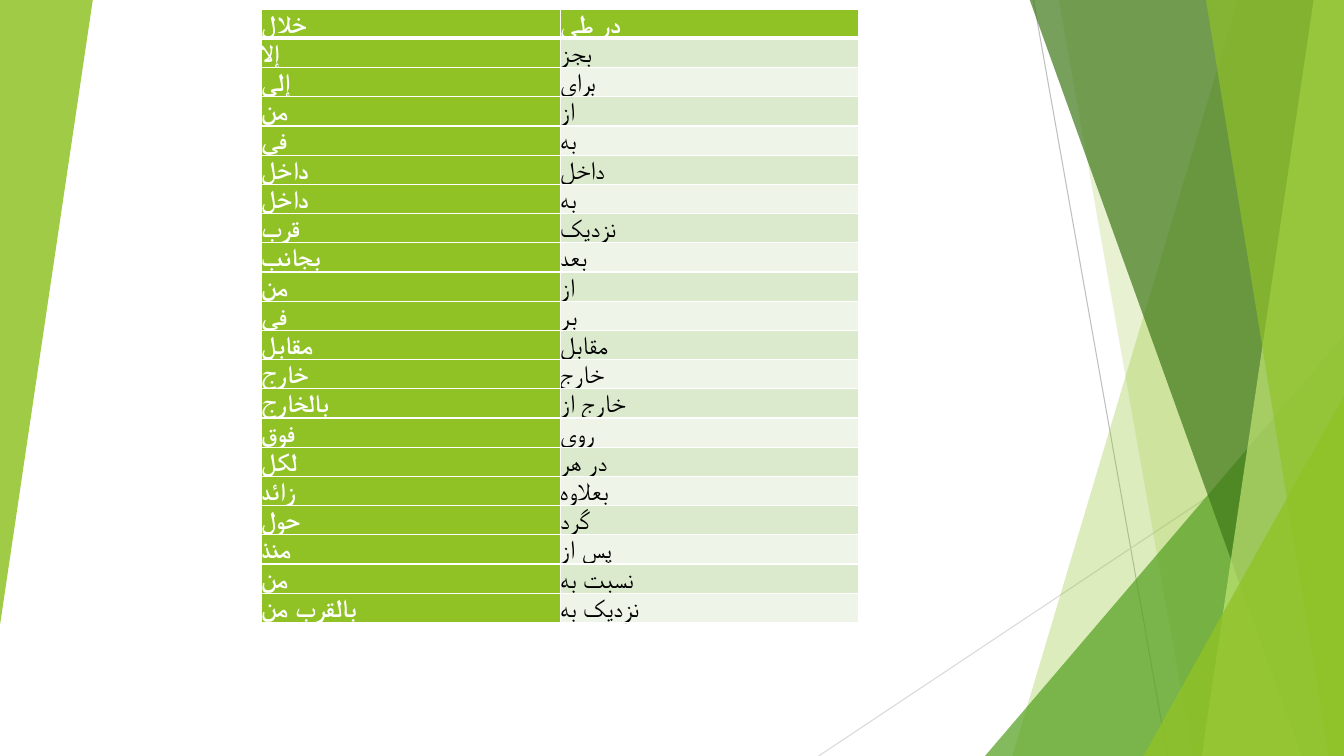
from dataclasses import dataclass

from lxml.etree import SubElement
from pptx import Presentation
from pptx.dml.color import RGBColor
from pptx.enum.shapes import MSO_CONNECTOR, MSO_SHAPE
from pptx.enum.text import MSO_ANCHOR
from pptx.oxml.ns import qn
from pptx.util import Inches, Pt


@dataclass(frozen=True)
class Theme:
    green: str = "90C226"
    leaf: str = "54A021"
    forest: str = "3F7819"
    lime: str = "C0E474"
    dark_band: str = "DBE9CD"
    light_band: str = "EEF4E8"
    white: str = "FFFFFF"
    black: str = "000000"
    steep_line: str = "BFBFBF"
    shallow_line: str = "D9D9D9"
    font: str = "Karla"
    text_size: float = 18
    line_spacing: float = 1.15


@dataclass(frozen=True)
class Box:
    left: float
    top: float
    width: float
    height: float

    @property
    def right(self):
        return self.left + self.width

    @property
    def bottom(self):
        return self.top + self.height


THEME = Theme()
SLIDE_WIDTH, SLIDE_HEIGHT = 13.33, 7.5

# Arabic word and its Persian meaning; the first pair is the header.
WORD_PAIRS = [
    ("خلال", "در طی"),
    ("إلا", "بجز"),
    ("إلى", "برای"),
    ("من", "از"),
    ("في", "به"),
    ("داخل", "داخل"),
    ("داخل", "به"),
    ("قرب", "نزدیک"),
    ("بجانب", "بعد"),
    ("من", "از"),
    ("في", "بر"),
    ("مقابل", "مقابل"),
    ("خارج", "خارج"),
    ("بالخارج", "خارج از"),
    ("فوق", "روی"),
    ("لكل", "در هر"),
    ("زائد", "بعلاوه"),
    ("حول", "گرد"),
    ("منذ", "پس از"),
    ("من", "نسبت به"),
    ("بالقرب من", "نزدیک به"),
]


def paint(shape, color, opacity):
    """Give a shape a translucent fill with no outline or shadow."""
    shape.shadow.inherit = False
    shape.line.fill.background()
    shape.fill.solid()
    shape.fill.fore_color.rgb = RGBColor.from_string(color)
    color_element = shape.fill._xPr.find(qn("a:solidFill"))[0]
    SubElement(color_element, qn("a:alpha"), val=str(opacity * 1000))


def add_thin_line(slide, start, end, color):
    line = slide.shapes.add_connector(
        MSO_CONNECTOR.STRAIGHT, *(Inches(value) for value in start + end))
    line.line.color.rgb = RGBColor.from_string(color)
    line.line.width = Pt(0.75)
    SubElement(line._element.spPr, qn("a:effectLst"))


def add_slab(slide, box, top_inset, bottom_inset, color, opacity):
    """Draw a facet with a slanted left side, inset from the box's right edge."""
    top = box.top - 0.01
    corners = [
        (box.right - top_inset, top),
        (box.right, top),
        (box.right, box.bottom),
        (box.right - bottom_inset, box.bottom),
    ]
    points = [(Inches(x), Inches(y)) for x, y in corners]
    builder = slide.shapes.build_freeform(*points[0], scale=1.0)
    builder.add_line_segments(points[1:], close=True)
    paint(builder.convert_to_shape(), color, opacity)


def add_right_triangle(slide, box, color, opacity, rotation=0):
    triangle = slide.shapes.add_shape(
        MSO_SHAPE.ISOSCELES_TRIANGLE, Inches(box.left), Inches(box.top),
        Inches(box.width), Inches(box.height))
    triangle.adjustments[0] = 1
    triangle.rotation = rotation
    paint(triangle, color, opacity)


def add_corner_triangle(slide, box, width, height, color, opacity):
    """Draw a triangle in the bottom right corner of the box."""
    corner = Box(box.right - width, box.bottom - height, width, height)
    add_right_triangle(slide, corner, color, opacity)


def add_facets(slide, box):
    add_thin_line(slide, (box.left + 2.13, box.top),
                  (box.left + 3.46, box.bottom), THEME.steep_line)
    add_thin_line(slide, (box.right, box.top + 4.03),
                  (box.left, box.bottom), THEME.shallow_line)
    add_slab(slide, box, 1.05, 3.29, THEME.green, 30)
    add_slab(slide, box, 2.83, 1.5, THEME.green, 20)
    add_corner_triangle(slide, box, 3.56, 4.17, THEME.leaf, 72)
    add_slab(slide, box, 3.12, 0.42, THEME.forest, 70)
    add_slab(slide, box, 0.3, 1.41, THEME.lime, 70)
    add_slab(slide, box, 1.37, 0.15, THEME.green, 65)
    add_corner_triangle(slide, box, 1.99, 3.57, THEME.green, 80)


def add_borders(cell, bottom_width):
    properties = cell._tc.get_or_add_tcPr()
    for side, width in (("L", 1), ("R", 1), ("T", 1), ("B", bottom_width)):
        border = SubElement(properties, qn(f"a:ln{side}"), w=str(Pt(width)))
        fill = SubElement(border, qn("a:solidFill"))
        SubElement(fill, qn("a:srgbClr"), val=THEME.white)


def fill_cell(cell, text, fill, color, bold, bottom_width):
    add_borders(cell, bottom_width)
    cell.fill.solid()
    cell.fill.fore_color.rgb = RGBColor.from_string(fill)
    cell.margin_left = cell.margin_right = 0
    cell.margin_top = cell.margin_bottom = 0
    cell.vertical_anchor = MSO_ANCHOR.MIDDLE
    paragraph = cell.text_frame.paragraphs[0]
    paragraph.line_spacing = THEME.line_spacing
    run = paragraph.add_run()
    run.text = text
    run.font.name = THEME.font
    run.font.size = Pt(THEME.text_size)
    run.font.bold = bold
    run.font.color.rgb = RGBColor.from_string(color)


def add_word_table(slide, box):
    table = slide.shapes.add_table(
        len(WORD_PAIRS), 2, Inches(box.left), Inches(box.top),
        Inches(box.width), Inches(box.height)).table
    table.first_col = True
    for row, pair in enumerate(WORD_PAIRS):
        band = THEME.dark_band if row % 2 else THEME.light_band
        for column, word in enumerate(pair):
            strong = row == 0 or column == 0
            fill_cell(
                table.cell(row, column), word,
                fill=THEME.green if strong else band,
                color=THEME.white if strong else THEME.black,
                bold=strong,
                bottom_width=3 if row == 0 else 1)


def main():
    presentation = Presentation()
    presentation.slide_width = Inches(SLIDE_WIDTH)
    presentation.slide_height = Inches(SLIDE_HEIGHT)
    slide = presentation.slides.add_slide(presentation.slide_layouts[6])
    add_facets(slide, Box(8.12, 0, SLIDE_WIDTH - 8.12, SLIDE_HEIGHT))
    add_right_triangle(slide, Box(0, 0, 0.92, 6.2), THEME.green, 85, rotation=180)
    add_word_table(slide, Box(2.59, 0.09, 5.93, 0.29 * len(WORD_PAIRS)))
    presentation.save("out.pptx")


if __name__ == "__main__":
    main()
